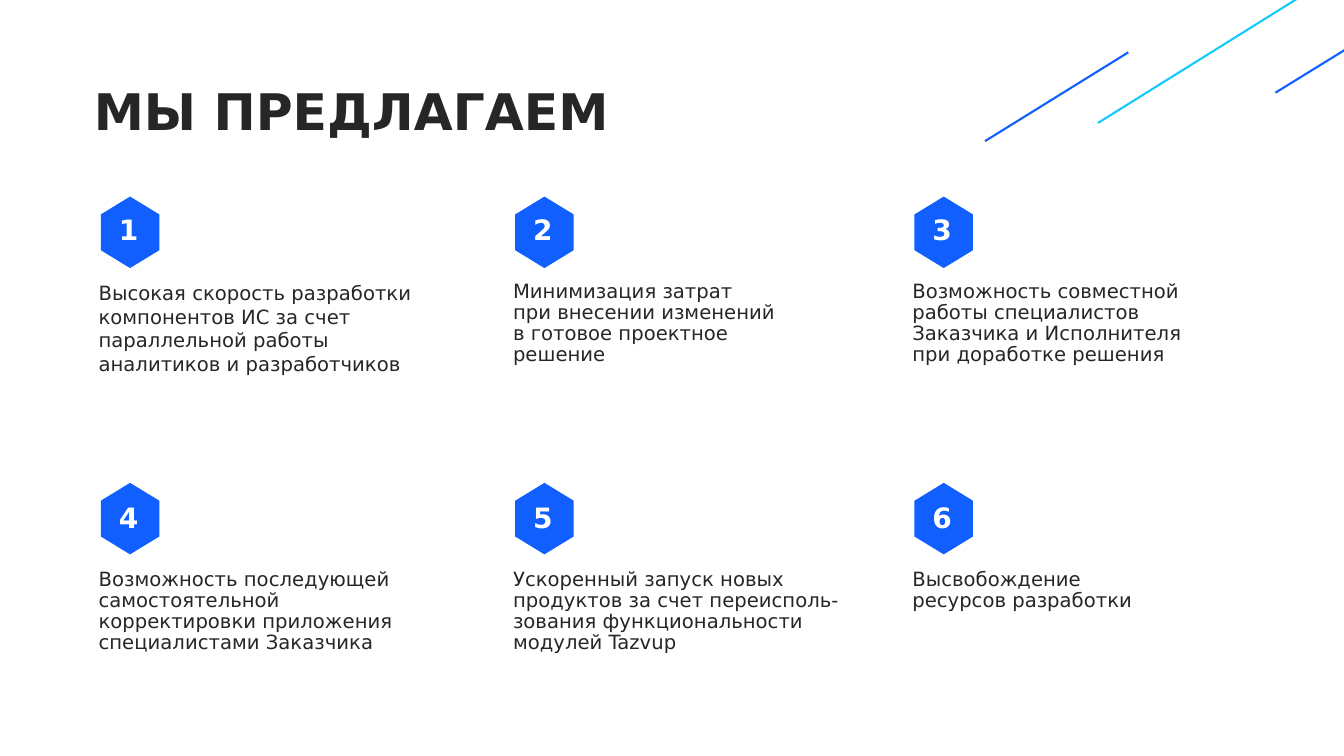
from pptx import Presentation
from pptx.dml.color import RGBColor
from pptx.enum.shapes import MSO_CONNECTOR
from pptx.enum.text import MSO_ANCHOR, PP_ALIGN
from pptx.oxml.ns import qn
from pptx.util import Inches, Pt

FONT = "DejaVu Sans"
INK, BLUE, CYAN, WHITE = "262626", "115FFF", "14CAFD", "FFFFFF"


def color(value):
    return RGBColor.from_string(value)


def write(shape, text, size, ink, bold=False, **paragraph_format):
    frame = shape.text_frame
    frame.word_wrap = True
    frame.vertical_anchor = MSO_ANCHOR.TOP
    frame.text = text
    paragraph = frame.paragraphs[0]
    for name, value in ({"alignment": PP_ALIGN.LEFT} | paragraph_format).items():
        setattr(paragraph, name, value)
    for run in paragraph.runs:
        for name, value in {"name": FONT, "size": Pt(size), "bold": bold}.items():
            setattr(run.font, name, value)
        run.font.color.rgb = color(ink)


deck = Presentation()
deck.slide_width, deck.slide_height = Inches(13.33), Inches(7.5)
slide = deck.slides.add_slide(deck.slide_layouts[5])
shapes = slide.shapes

# Title
title = shapes.title
title.left, title.top = Inches(0.86), Inches(0.7)
title.width, title.height = Inches(6.11), Inches(0.71)
write(title, "МЫ ПРЕДЛАГАЕМ", 36, INK, bold=True)
title.text_frame.margin_left = Inches(0.07)
title.text_frame.margin_top = Inches(0.09)

# Six offers in a grid of three columns: text and width of its box
offers = [
    ("Высокая скорость разработки компонентов ИС за счет параллельной работы"
     "\vаналитиков и разработчиков", 3.73),
    ("Минимизация затрат\vпри внесении изменений\vв готовое проектное решение", 3.07),
    ("Возможность совместной работы специалистов Заказчика и Исполнителя"
     "\vпри доработке решения", 3.31),
    ("Возможность последующей самостоятельной корректировки приложения "
     "специалистами Заказчика", 3.57),
    ("Ускоренный запуск новых\vпродуктов за счет переисполь-зования "
     "функциональности модулей Tazvup", 3.48),
    ("Высвобождение ресурсов разработки", 2.72),
]
columns = [0.88, 4.99, 8.95]
rows = [(1.95, 2.06, 2.74), (4.79, 4.92, 5.6)]  # tops of badge, number, text
badge_width, badge_height = 0.58, 0.71
badge_corners = [(0.5, 0), (1, 0.25), (1, 0.75), (0.5, 1), (0, 0.75), (0, 0.25)]
tight = {"line_spacing": 0.9, "space_before": Pt(5)}

for index, (offer, offer_width) in enumerate(offers):
    row, column = divmod(index, len(columns))
    left = columns[column]
    badge_top, number_top, offer_top = rows[row]

    # Hexagonal badge
    corners = [(Inches(left + 0.12 + x * badge_width), Inches(badge_top + y * badge_height))
               for x, y in badge_corners]
    outline = shapes.build_freeform(*corners[0])
    outline.add_line_segments(corners[1:], close=True)
    badge = outline.convert_to_shape()
    badge.shadow.inherit = False
    badge.fill.solid()
    badge.fill.fore_color.rgb = color(BLUE)
    badge.line.fill.background()

    # Number and wording
    number = shapes.add_textbox(Inches(left + 0.2), Inches(number_top), Inches(0.36), Inches(0.44))
    write(number, str(index + 1), 20, WHITE, bold=True)
    wording = shapes.add_textbox(Inches(left), Inches(offer_top), Inches(offer_width), Inches(0.95))
    write(wording, offer, 14, INK, **(tight if index else {}))

# Slanted lines in the top right corner
for x1, y1, x2, y2, stroke in [
    (9.77, 1.4, 11.19, 0.52, BLUE),
    (10.89, 1.22, 13.31, -0.29, CYAN),
    (12.65, 0.92, 13.59, 0.34, BLUE),
]:
    slant = shapes.add_connector(MSO_CONNECTOR.STRAIGHT,
                                 Inches(x1), Inches(y1), Inches(x2), Inches(y2))
    slant.line.color.rgb = color(stroke)
    slant.line.width = Pt(1.5)
    properties = slant.element.spPr
    properties.append(properties.makeelement(qn("a:effectLst"), {}))

deck.save("out.pptx")
